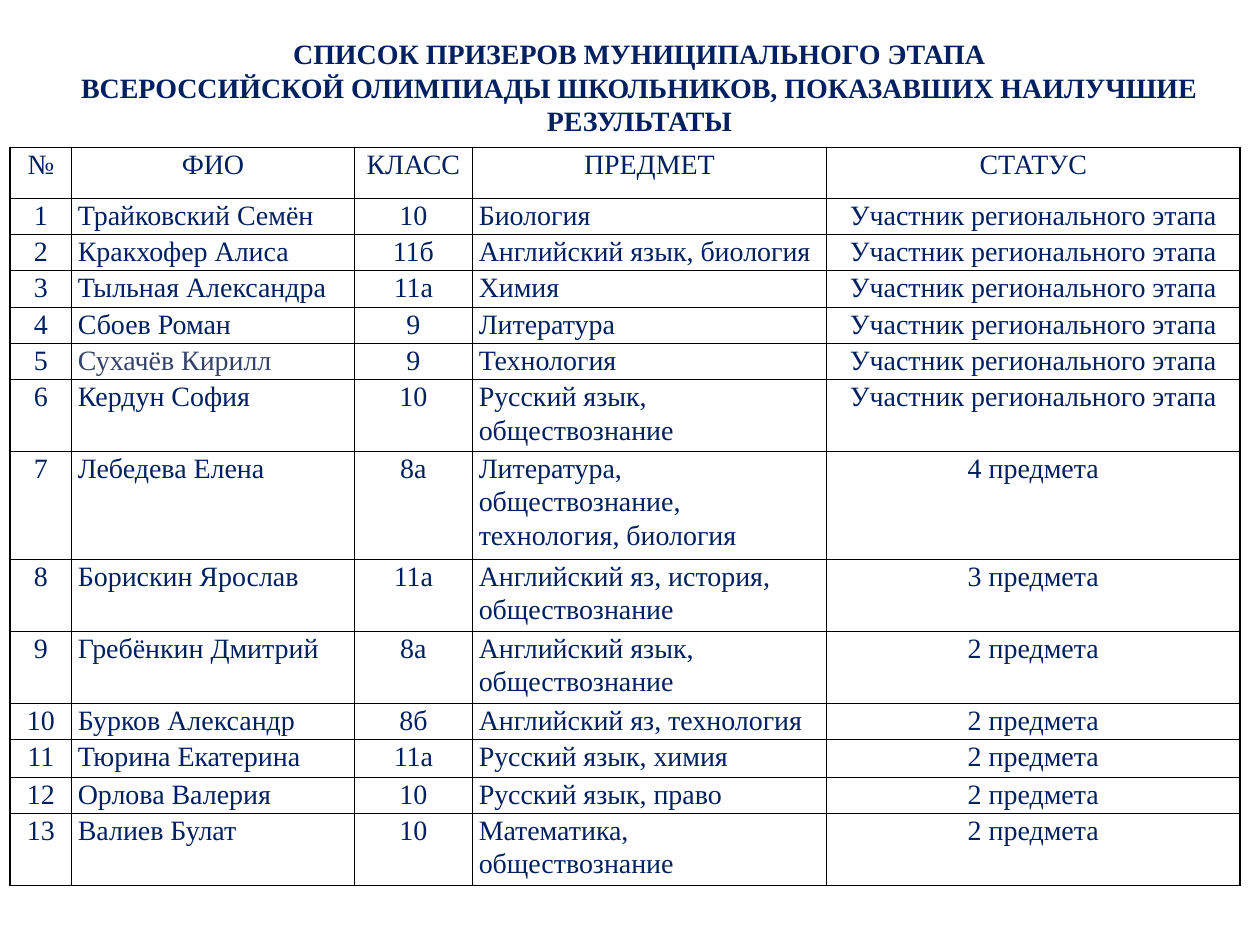
from dataclasses import dataclass
from typing import NamedTuple

from lxml.etree import SubElement
from pptx import Presentation
from pptx.dml.color import RGBColor
from pptx.enum.text import MSO_ANCHOR, PP_ALIGN
from pptx.oxml.ns import qn
from pptx.util import Pt


@dataclass(frozen=True)
class Theme:
    font: str = "Times New Roman"
    size: float = 16
    navy: str = "002060"
    slate: str = "35436A"
    line: str = "000000"
    width: float = 1
    lead: float = 1.07


class Entry(NamedTuple):
    name: str
    form: str
    topic: str
    status: str
    lines: int = 1
    extra: float = 0  # added to the row height, in points
    color: str = Theme.navy


THEME = Theme()
LINE = 20.57  # height of one text line in a row
HEAD = 29.3
WIDTHS = (35.1, 161.6, 67.5, 202.3, 236.4)
CENTER, LEFT = PP_ALIGN.CENTER, PP_ALIGN.LEFT
ALIGNS = (CENTER, LEFT, CENTER, LEFT, CENTER)
REGION = "Участник регионального этапа"
TITLE = (
    "СПИСОК ПРИЗЕРОВ МУНИЦИПАЛЬНОГО ЭТАПА",
    "ВСЕРОССИЙСКОЙ ОЛИМПИАДЫ ШКОЛЬНИКОВ, ПОКАЗАВШИХ НАИЛУЧШИЕ РЕЗУЛЬТАТЫ",
)
HEADS = ("№", "ФИО", "КЛАСС", "ПРЕДМЕТ", "СТАТУС")
ENTRIES = (
    Entry("Трайковский Семён", "10", "Биология", REGION),
    Entry("Кракхофер Алиса", "11б", "Английский язык, биология", REGION),
    Entry("Тыльная Александра", "11а", "Химия", REGION, extra=0.7),
    Entry("Сбоев Роман", "9", "Литература", REGION),
    Entry("Сухачёв Кирилл", "9", "Технология", REGION, color=THEME.slate),
    Entry("Кердун София", "10", "Русский язык, обществознание", REGION, 2),
    Entry("Лебедева Елена", "8а",
          "Литература, обществознание, технология, биология", "4 предмета", 3),
    Entry("Борискин Ярослав", "11а",
          "Английский яз, история, обществознание", "3 предмета", 2),
    Entry("Гребёнкин Дмитрий", "8а",
          "Английский язык, обществознание", "2 предмета", 2),
    Entry("Бурков Александр", "8б", "Английский яз, технология", "2 предмета"),
    Entry("Тюрина Екатерина", "11а", "Русский язык, химия", "2 предмета",
          extra=1.2),
    Entry("Орлова Валерия", "10", "Русский язык, право", "2 предмета"),
    Entry("Валиев Булат", "10", "Математика, обществознание", "2 предмета", 2),
)


def style(para, align, color: str = THEME.navy, bold: bool = False) -> None:
    para.alignment = align
    for run in para.runs:
        run.font.name = THEME.font
        run.font.size = Pt(THEME.size)
        run.font.bold = bold
        run.font.color.rgb = RGBColor.from_string(color)


def border(cell) -> None:
    props = cell._tc.get_or_add_tcPr()
    for side in ("lnL", "lnR", "lnT", "lnB"):
        edge = SubElement(props, qn(f"a:{side}"), w=str(Pt(THEME.width)))
        fill = SubElement(edge, qn("a:solidFill"))
        SubElement(fill, qn("a:srgbClr"), val=THEME.line)


def fill_cell(cell, text: str, align, color: str) -> None:
    cell.margin_left = cell.margin_right = Pt(3.6)
    cell.margin_top = cell.margin_bottom = Pt(0)
    border(cell)
    cell.fill.background()
    para = cell.text_frame.paragraphs[0]
    para.text = text
    para.line_spacing = THEME.lead
    style(para, align, color)


def add_list(slide) -> None:
    heights = [HEAD] + [LINE * e.lines + e.extra for e in ENTRIES]
    table = slide.shapes.add_table(
        len(heights), len(WIDTHS), Pt(5.8), Pt(84.2),
        Pt(sum(WIDTHS)), Pt(sum(heights))).table
    table.first_row = table.horz_banding = False
    for col, width in zip(table.columns, WIDTHS):
        col.width = Pt(width)
    for row, height in zip(table.rows, heights):
        row.height = Pt(height)

    # Header row
    for cell, text in zip(table.rows[0].cells, HEADS):
        fill_cell(cell, text, CENTER, THEME.navy)

    # Numbered entries
    for num, entry in enumerate(ENTRIES, 1):
        texts = (str(num), entry.name, entry.form, entry.topic, entry.status)
        for col, (text, align) in enumerate(zip(texts, ALIGNS)):
            color = entry.color if col == 1 else THEME.navy
            fill_cell(table.cell(num, col), text, align, color)


def add_title(slide) -> None:
    box = slide.shapes.add_textbox(Pt(22.3), Pt(16.6), Pt(686.2), Pt(87.1))
    frame = box.text_frame
    frame.word_wrap = True
    frame.vertical_anchor = MSO_ANCHOR.MIDDLE
    frame.margin_bottom = Pt(24.3)
    frame.text = "\n".join(TITLE)
    for para in frame.paragraphs:
        style(para, CENTER, bold=True)


def main() -> None:
    deck = Presentation()
    deck.slide_width, deck.slide_height = Pt(720), Pt(540)
    slide = deck.slides.add_slide(deck.slide_layouts[6])
    add_list(slide)
    add_title(slide)
    deck.save("out.pptx")


if __name__ == "__main__":
    main()
